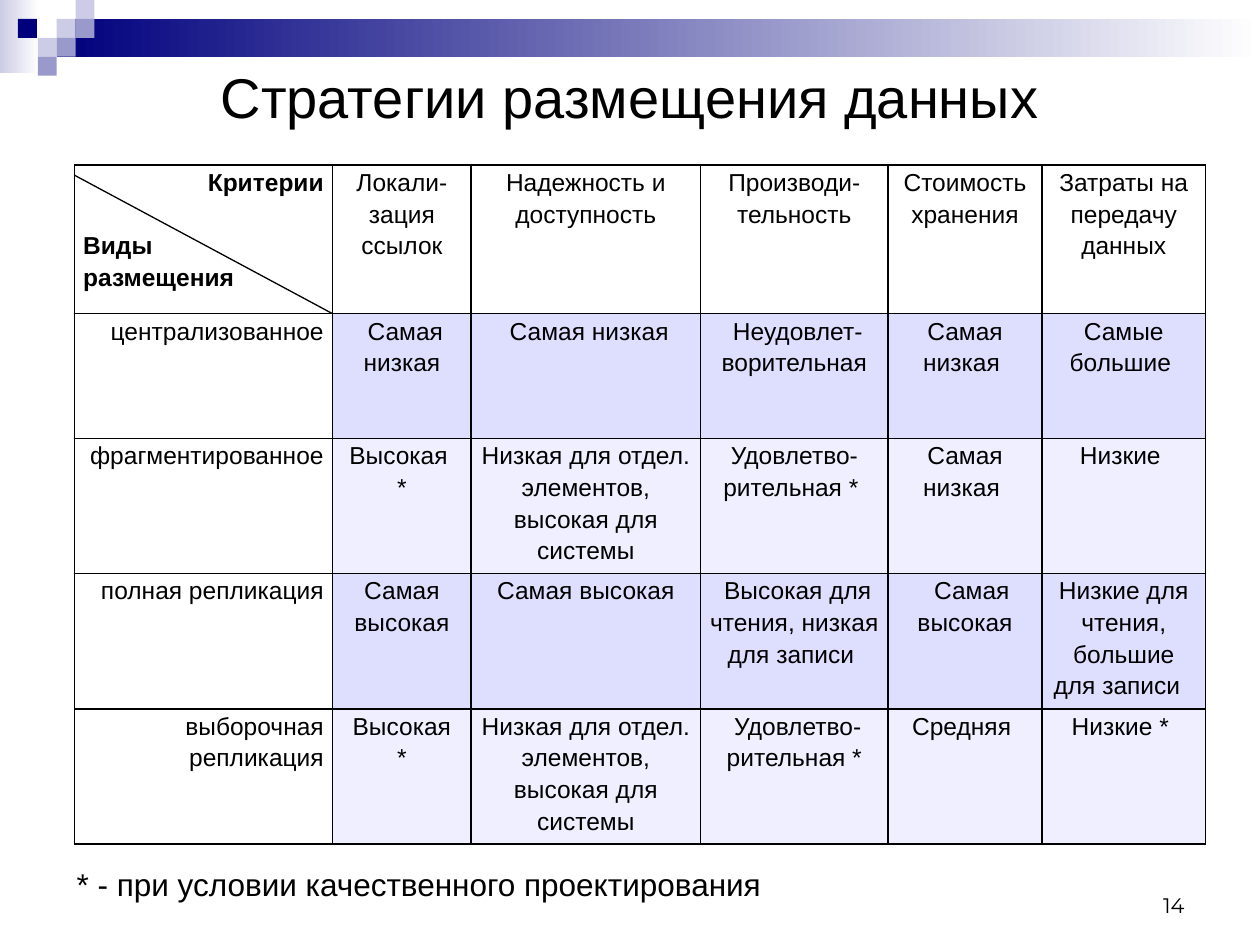
from lxml import etree
from pptx import Presentation
from pptx import util as u
from pptx.dml.color import RGBColor
from pptx.enum import shapes, text
from pptx.oxml import ns

Inches, Pt = u.Inches, u.Pt
BLACK = RGBColor(0, 0, 0)
WHITE = RGBColor(0xFF, 0xFF, 0xFF)
NAVY = RGBColor(0x00, 0x00, 0x7D)
LAVENDER = RGBColor(0xCC, 0xCC, 0xE6)
VIOLET = RGBColor(0x99, 0x99, 0xCC)
BAND_DARK = RGBColor(0xDE, 0xDE, 0xFF)
BAND_LIGHT = RGBColor(0xEF, 0xEF, 0xFF)
LEFT, CENTER, RIGHT = text.PP_ALIGN.LEFT, text.PP_ALIGN.CENTER, text.PP_ALIGN.RIGHT
TOP, MIDDLE, BOTTOM = (text.MSO_ANCHOR.TOP, text.MSO_ANCHOR.MIDDLE,
                       text.MSO_ANCHOR.BOTTOM)


def box(*lengths):
    return [Inches(n) for n in lengths]


def apply(target, values):
    for name, value in values.items():
        setattr(target, name, value)


class Builder:
    """Holds the text style and the current slide."""

    def __init__(self, s, font="Arial"):
        self.s = s
        self.font = font

    def add_text(self, p, words, size, align=LEFT, **font):
        p.alignment = align
        r = p.add_run()
        r.text = words
        apply(r.font, {"name": self.font, "size": Pt(size), "bold": False, **font})
        r.font.color.rgb = BLACK

    def label(self, at, words, size, align=LEFT, anchor=TOP, **font):
        tf = self.s.shapes.add_textbox(*box(*at)).text_frame
        apply(tf, {"word_wrap": True, "vertical_anchor": anchor})
        self.add_text(tf.paragraphs[0], words, size, align, **font)

    def rect(self, at, color, fade_to=None):
        sp = self.s.shapes.add_shape(shapes.MSO_SHAPE.RECTANGLE, *box(*at))
        sp.shadow.inherit = False
        sp.line.fill.background()
        if fade_to is None:
            sp.fill.solid()
            sp.fill.fore_color.rgb = color
            return
        sp.fill.gradient()
        sp.fill.gradient_angle = 0
        for stop, rgb in zip(sp.fill.gradient_stops, (color, fade_to)):
            stop.color.rgb = rgb

    def line(self, start, end, width):
        c = self.s.shapes.add_connector(shapes.MSO_CONNECTOR.STRAIGHT,
                                        *box(*start, *end))
        c.line.color.rgb = BLACK
        c.line.width = Pt(width)
        etree.SubElement(c._element.spPr, ns.qn("a:effectLst"))

    def table(self, at, widths, heights):
        t = self.s.shapes.add_table(len(heights), len(widths), *box(*at)).table
        apply(t, {"first_row": False, "horz_banding": False})
        for col, width in zip(t.columns, widths):
            col.width = Inches(width)
        for row, height in zip(t.rows, heights):
            row.height = Inches(height)
        return t

    def cell(self, c, lines, fill=None, gap=0, **font):
        """Fill a cell with (words, alignment) lines; gap precedes the second."""
        apply(c, {"margin_left": Inches(0.07), "margin_right": Inches(0.07),
                  "margin_top": 0, "margin_bottom": 0})
        self.borders(c)
        if fill is None:
            c.fill.background()
        else:
            c.fill.solid()
            c.fill.fore_color.rgb = fill
        tf = c.text_frame
        for i, (words, side) in enumerate(lines):
            p = tf.add_paragraph() if i else tf.paragraphs[0]
            apply(p, {"line_spacing": 1.15, "space_before": Pt(gap if i == 1 else 0)})
            self.add_text(p, words, 14, side, **font)

    def borders(self, c):
        tcPr = c._tc.get_or_add_tcPr()
        for side in ("lnL", "lnR", "lnT", "lnB"):
            ln = etree.SubElement(tcPr, ns.qn(f"a:{side}"), w=str(Pt(1)))
            solid = etree.SubElement(ln, ns.qn("a:solidFill"))
            etree.SubElement(solid, ns.qn("a:srgbClr"), val=str(BLACK))


WIDTHS = [2.05, 1.1, 1.82, 1.49, 1.22, 1.3]
HEIGHTS = [1.18, 0.99, 1.07, 1.07, 1.07]
CRITERIA = ["Локали-зация ссылок", "Надежность и доступность", "Производи-тельность",
            "Стоимость хранения", "Затраты на передачу данных"]
PARTIAL = "Низкая для отдел. элементов, высокая для системы"
STRATEGIES = [
    ["централизованное", " Самая низкая", " Самая низкая",
     " Неудовлет-ворительная", "Самая низкая ", "Самые большие "],
    ["фрагментированное", "Высокая  *", PARTIAL,
     "Удовлетво-рительная * ", "Самая низкая ", "Низкие "],
    ["полная репликация", "Самая высокая", " Самая высокая ",
     " Высокая для чтения, низкая для записи ", "  Самая высокая",
     "Низкие для чтения, большие для записи  "],
    ["выборочная репликация", " Высокая  *", PARTIAL,
     " Удовлетво-рительная *", "Средняя ", "Низкие * "],
]
TILE = 0.15
TILES = [(3, 1, LAVENDER), (4, 0, LAVENDER), (4, 1, VIOLET), (2, 2, LAVENDER),
         (0.95, 1, NAVY), (3, 2, VIOLET), (2, 3, VIOLET)]


def main():
    prs = Presentation()
    prs.slide_width, prs.slide_height = box(10, 7.5)
    b = Builder(prs.slides.add_slide(prs.slide_layouts[6]))

    b.rect((0, 0, 0.31, 0.58), LAVENDER, WHITE)
    b.rect((0.45, 0.15, 9.55, 0.3), NAVY, WHITE)
    for col, row, color in TILES:
        b.rect((col * TILE, row * TILE, TILE, TILE), color)
    b.label((0.5, 0.28, 9, 0.97), "Стратегии размещения данных", 32, CENTER, MIDDLE)

    t = b.table((0.59, 1.31, sum(WIDTHS), sum(HEIGHTS)), WIDTHS, HEIGHTS)
    b.cell(t.cell(0, 0), [("Критерии", RIGHT), ("Виды", LEFT), ("размещения", LEFT)],
           gap=18, bold=True)
    for col, words in enumerate(CRITERIA, 1):
        b.cell(t.cell(0, col), [(words, CENTER)])
    for row, strategy in enumerate(STRATEGIES, 1):
        band = BAND_DARK if row % 2 else BAND_LIGHT
        for col, words in enumerate(strategy):
            b.cell(t.cell(row, col), [(words, CENTER if col else RIGHT)],
                   fill=band if col else None)
    b.line((0.59, 1.39), (2.64, 2.49), 0.75)

    b.label((0.51, 6.82, 8.82, 0.4), "* - при условии качественного проектирования", 18)
    b.label((7.17, 6.83, 2.33, 0.5), "14", 12, RIGHT, BOTTOM, name="Montserrat")
    prs.save("out.pptx")


if __name__ == "__main__":
    main()
